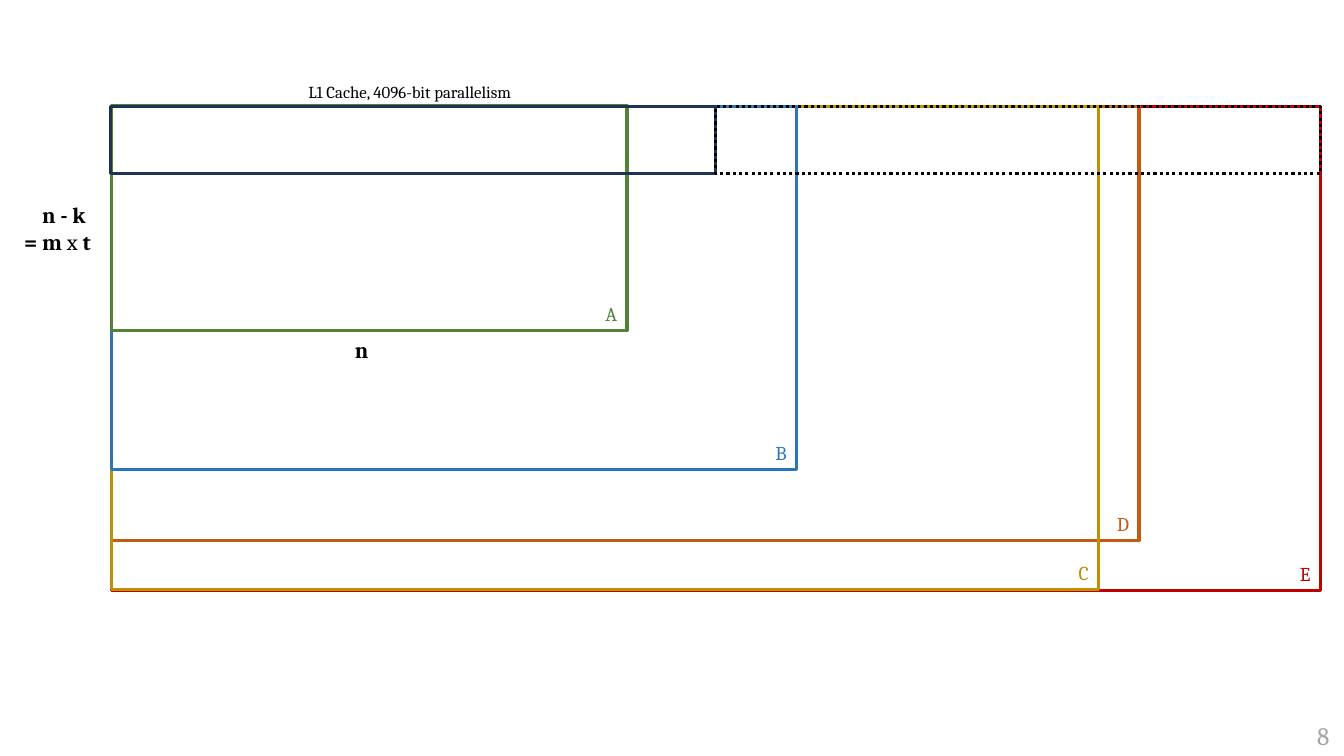
from pptx import Presentation
from pptx.dml.color import RGBColor
from pptx.enum.dml import MSO_LINE
from pptx.enum.shapes import MSO_SHAPE
from pptx.enum.text import MSO_ANCHOR, PP_ALIGN
from pptx.util import Pt

RECTANGLE = MSO_SHAPE.RECTANGLE
DOTTED = MSO_LINE.ROUND_DOT
BOTTOM = MSO_ANCHOR.BOTTOM
RIGHT = PP_ALIGN.RIGHT

RED = RGBColor(0xC0, 0x00, 0x00)
ORANGE = RGBColor(0xC5, 0x5A, 0x11)
GOLD = RGBColor(0xBF, 0x90, 0x00)
BLUE = RGBColor(0x2E, 0x75, 0xB6)
GREEN = RGBColor(0x54, 0x82, 0x35)
NAVY = RGBColor(0x1E, 0x32, 0x56)
BLACK = RGBColor(0x00, 0x00, 0x00)
GRAY = RGBColor(0xA5, 0xA5, 0xA5)

FONT = "Cambria"
MATRIX_LEFT = 79.9
MATRIX_TOP = 76.3
CACHE_LEFT = 79.2
CACHE_WIDTH = 432
CACHE_HEIGHT = 47.5

presentation = Presentation()
presentation.slide_width = Pt(960)
presentation.slide_height = Pt(540)
slide = presentation.slides.add_slide(presentation.slide_layouts[6])


def add_outline(left, top, width, height, color):
    shape = slide.shapes.add_shape(RECTANGLE, Pt(left), Pt(top), Pt(width), Pt(height))
    shape.shadow.inherit = False
    shape.fill.background()
    shape.line.color.rgb = color
    shape.line.width = Pt(2.25)
    return shape


def add_label(left, top, width, height, lines, size, color=BLACK, bold=False):
    frame = slide.shapes.add_textbox(Pt(left), Pt(top), Pt(width), Pt(height)).text_frame
    frame.word_wrap = True
    frame.text = "\n".join(lines)
    for paragraph in frame.paragraphs:
        paragraph.font.name = FONT
        paragraph.font.size = Pt(size)
        paragraph.font.bold = bold
        paragraph.font.color.rgb = color
    return frame


matrices = [
    ("E", MATRIX_TOP, 863.3, 345.4, RED),
    ("D", MATRIX_TOP, 733.7, 309.8, ORANGE),
    ("C", MATRIX_TOP, 705, 345, GOLD),
    ("B", MATRIX_TOP, 489.2, 259.2, BLUE),
    ("A", 75.6, 368, 160.5, GREEN),
]
for name, top, width, height, color in matrices:
    matrix = add_outline(MATRIX_LEFT, top, width, height, color)
    matrix.text_frame.vertical_anchor = BOTTOM
    paragraph = matrix.text_frame.paragraphs[0]
    paragraph.text = name
    paragraph.alignment = RIGHT
    paragraph.font.name = FONT
    paragraph.font.size = Pt(14)
    paragraph.font.color.rgb = color

add_outline(CACHE_LEFT, MATRIX_TOP, CACHE_WIDTH, CACHE_HEIGHT, NAVY)
next_block = add_outline(CACHE_LEFT + CACHE_WIDTH, MATRIX_TOP, CACHE_WIDTH, CACHE_HEIGHT, BLACK)
next_block.line.dash_style = DOTTED

add_label(213.1, 54.7, 195.8, 21.8, ["L1 Cache, 4096-bit parallelism"], 12)
add_label(246.5, 236.9, 33, 26.6, ["n"], 16, bold=True)
add_label(933.8, 511.2, 26.2, 29, ["8"], 18, GRAY)

row_count = add_label(10.1, 140.4, 76.3, 46, ["n - k", "= m"], 16, bold=True)
first_line, second_line = row_count.paragraphs
first_line._p.get_or_add_pPr().set("marL", str(Pt(13)))
times = second_line.add_run()
times.text = " x "
times.font.bold = False
second_line.add_run().text = "t"

presentation.save("out.pptx")
